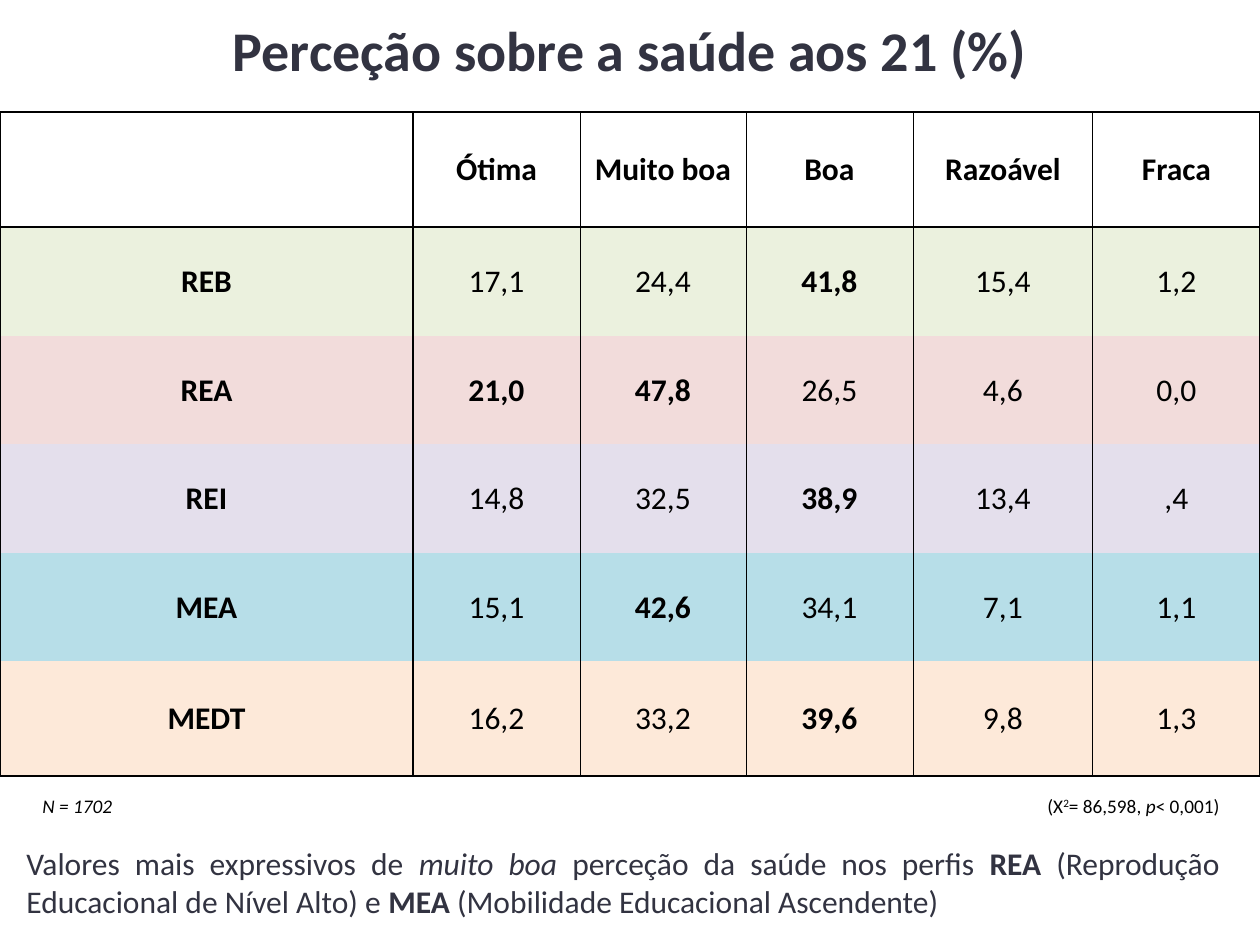
"""Build a slide with a table of health perception at age 21 by educational profile."""
from dataclasses import dataclass, field
from typing import NamedTuple

import lxml.etree
import pptx
import pptx.dml.color
import pptx.enum.text
import pptx.oxml.ns
import pptx.util

PX = 914400 / 126
COLORS = {
    "ink": "323341", "black": "000000", "REB": "EBF1DE", "REA": "F2DCDB",
    "REI": "E4DFEC", "MEA": "B7DEE8", "MEDT": "FDE9D9",
}
ALIGN = pptx.enum.text.PP_ALIGN
ANCHOR = pptx.enum.text.MSO_ANCHOR
BOLD = {"bold": True}
ITALIC = {"italic": True}


class Run(NamedTuple):
    text: str
    format: dict = {}
    superscript: bool = False


class Profile(NamedTuple):
    name: str
    values: list[str]
    strong: set[int]


@dataclass
class TextBlock:
    box: tuple[int, int, int, int]
    runs: list[Run]
    size: int
    color: str
    align: ALIGN = ALIGN.LEFT
    frame: dict = field(default_factory=dict)


BLOCKS = [
    TextBlock((63, 1, 1134, 97), [Run("Perceção sobre a saúde aos 21 (%)", BOLD)],
              32, "ink", ALIGN.CENTER, {"vertical_anchor": ANCHOR.MIDDLE}),
    TextBlock((30, 788, 130, 36), [Run("N = 1702", ITALIC)], 11, "black"),
    TextBlock((955, 788, 277, 36),
              [Run("(X"), Run("2", superscript=True), Run("= 86,598, "),
               Run("p", ITALIC), Run("< 0,001)")], 11, "black", ALIGN.RIGHT),
    TextBlock((14, 838, 1218, 89),
              [Run("Valores mais expressivos de "), Run("muito boa ", ITALIC),
               Run("perceção da saúde nos perfis "), Run("REA", BOLD),
               Run(" (Reprodução Educacional de Nível Alto) e "), Run("MEA", BOLD),
               Run(" (Mobilidade Educacional Ascendente)")],
              18, "ink", ALIGN.JUSTIFY),
]
HEADERS = ["", "Ótima", "Muito boa", "Boa", "Razoável", "Fraca"]
PROFILES = [
    Profile("REB", ["17,1", "24,4", "41,8", "15,4", "1,2"], {3}),
    Profile("REA", ["21,0", "47,8", "26,5", "4,6", "0,0"], {1, 2}),
    Profile("REI", ["14,8", "32,5", "38,9", "13,4", ",4"], {3}),
    Profile("MEA", ["15,1", "42,6", "34,1", "7,1", "1,1"], {2}),
    Profile("MEDT", ["16,2", "33,2", "39,6", "9,8", "1,3"], {3}),
]
TABLE_TOP = 112
COLUMN_WIDTHS = [413, 167, 166, 167, 180, 167]
ROW_HEIGHTS = [115, 109, 108, 109, 108, 115]
STRONG_EDGES = {0, 1, 6}


def emu(px: int) -> int:
    return round(px * PX)


def rgb(name: str) -> pptx.dml.color.RGBColor:
    return pptx.dml.color.RGBColor.from_string(COLORS[name])


def apply(target: object, values: dict) -> None:
    for name, value in values.items():
        setattr(target, name, value)


def write_runs(paragraph, runs: list[Run], size: int, color: str, align: ALIGN) -> None:
    paragraph.alignment = align
    for item in runs:
        run = paragraph.add_run()
        run.text = item.text
        apply(run.font, {"name": "Calibri", "size": pptx.util.Pt(size), **item.format})
        run.font.color.rgb = rgb(color)
        if item.superscript:
            run.font._element.set("baseline", "30000")


def draw_block(slide, block: TextBlock) -> None:
    shape = slide.shapes.add_textbox(*map(emu, block.box))
    apply(shape.text_frame, {"word_wrap": True, **block.frame})
    write_runs(shape.text_frame.paragraphs[0], block.runs, block.size, block.color, block.align)


def add_border(cell, side: str, width: float) -> None:
    qn = pptx.oxml.ns.qn
    properties = cell._tc.get_or_add_tcPr()
    line = lxml.etree.SubElement(properties, qn(f"a:ln{side}"), w=str(pptx.util.Pt(width)))
    if width:
        fill = lxml.etree.SubElement(line, qn("a:solidFill"))
        lxml.etree.SubElement(fill, qn("a:srgbClr"), val=COLORS["black"])
    else:
        lxml.etree.SubElement(line, qn("a:noFill"))


def draw_cell(cell, row: int, column: int, run: Run, fill: str | None) -> None:
    for side, edge in (("L", column), ("R", column + 1)):
        add_border(cell, side, 1 if edge in STRONG_EDGES else 0.5)
    for side, edge in (("T", row), ("B", row + 1)):
        add_border(cell, side, 1 if edge in STRONG_EDGES else 0)
    if fill:
        cell.fill.solid()
        cell.fill.fore_color.rgb = rgb(fill)
    else:
        cell.fill.background()
    apply(cell, {"vertical_anchor": ANCHOR.MIDDLE, "margin_left": emu(1),
                 "margin_right": emu(1), "margin_top": emu(1), "margin_bottom": 0})
    if run.text:
        write_runs(cell.text_frame.paragraphs[0], [run], 18, "black", ALIGN.CENTER)


def draw_table(slide) -> None:
    table = slide.shapes.add_table(
        len(ROW_HEIGHTS), len(COLUMN_WIDTHS), 0, emu(TABLE_TOP),
        emu(sum(COLUMN_WIDTHS)), emu(sum(ROW_HEIGHTS))).table
    apply(table, {"first_row": False, "horz_banding": False})
    for column, width in zip(table.columns, COLUMN_WIDTHS):
        column.width = emu(width)
    for row, height in zip(table.rows, ROW_HEIGHTS):
        row.height = emu(height)
    for column, text in enumerate(HEADERS):
        draw_cell(table.cell(0, column), 0, column, Run(text, BOLD), None)
    for row, profile in enumerate(PROFILES, 1):
        for column, text in enumerate([profile.name, *profile.values]):
            run = Run(text, {"bold": column in profile.strong | {0}})
            draw_cell(table.cell(row, column), row, column, run, profile.name)


def main() -> None:
    presentation = pptx.Presentation()
    apply(presentation, {"slide_width": emu(1260), "slide_height": emu(945)})
    slide = presentation.slides.add_slide(presentation.slide_layouts[6])
    for block in BLOCKS:
        draw_block(slide, block)
    draw_table(slide)
    presentation.save("out.pptx")


if __name__ == "__main__":
    main()
